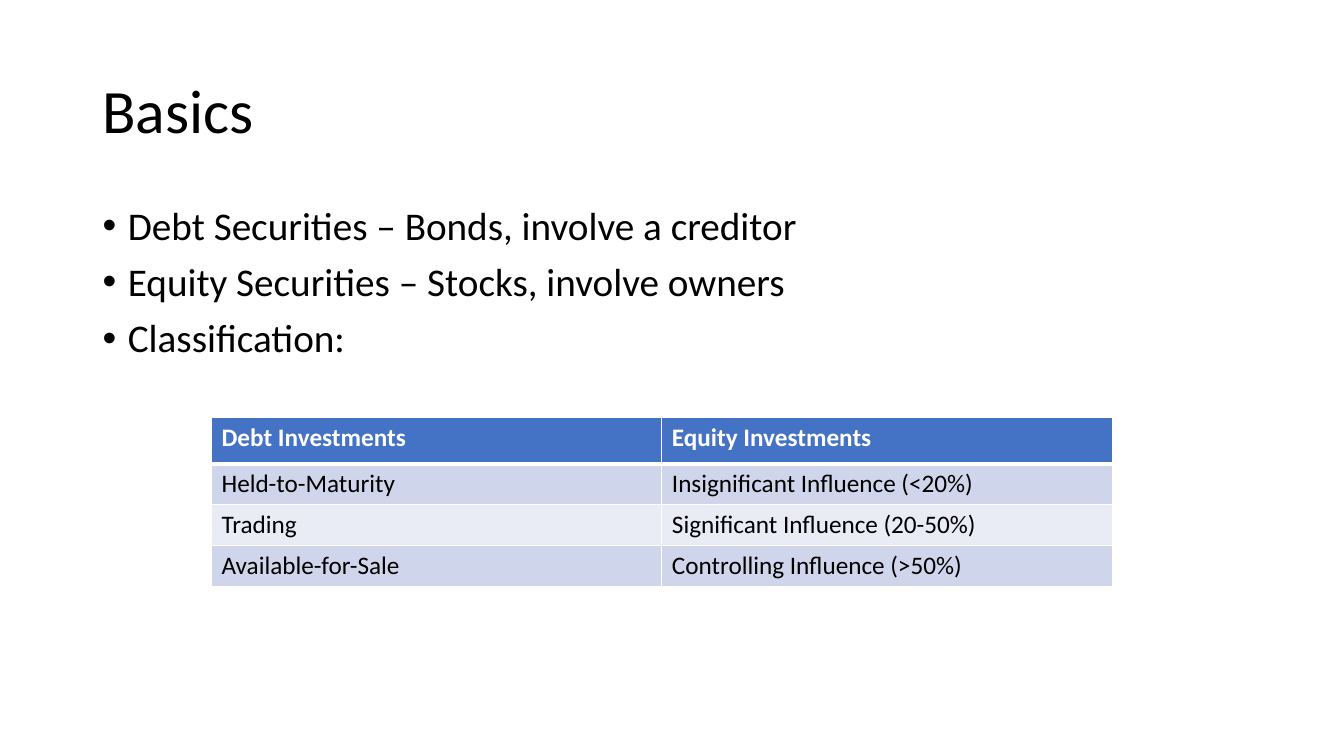
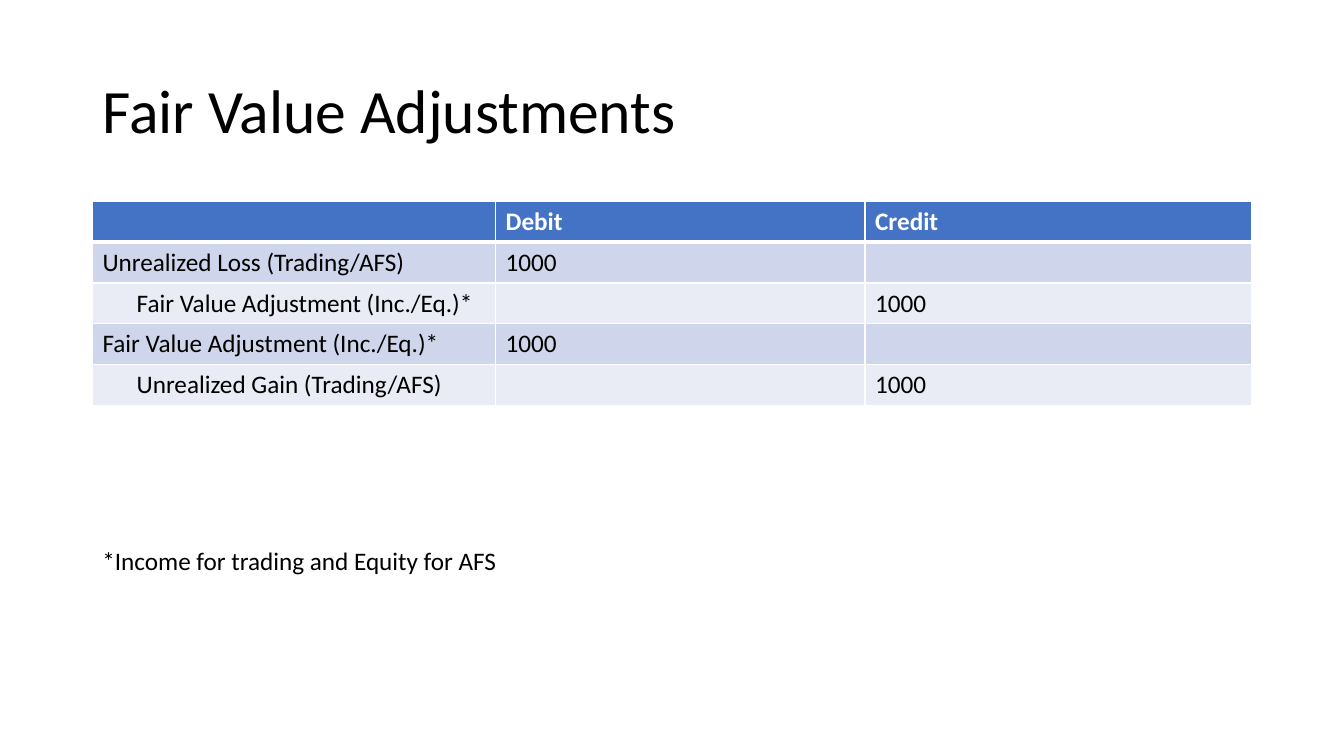
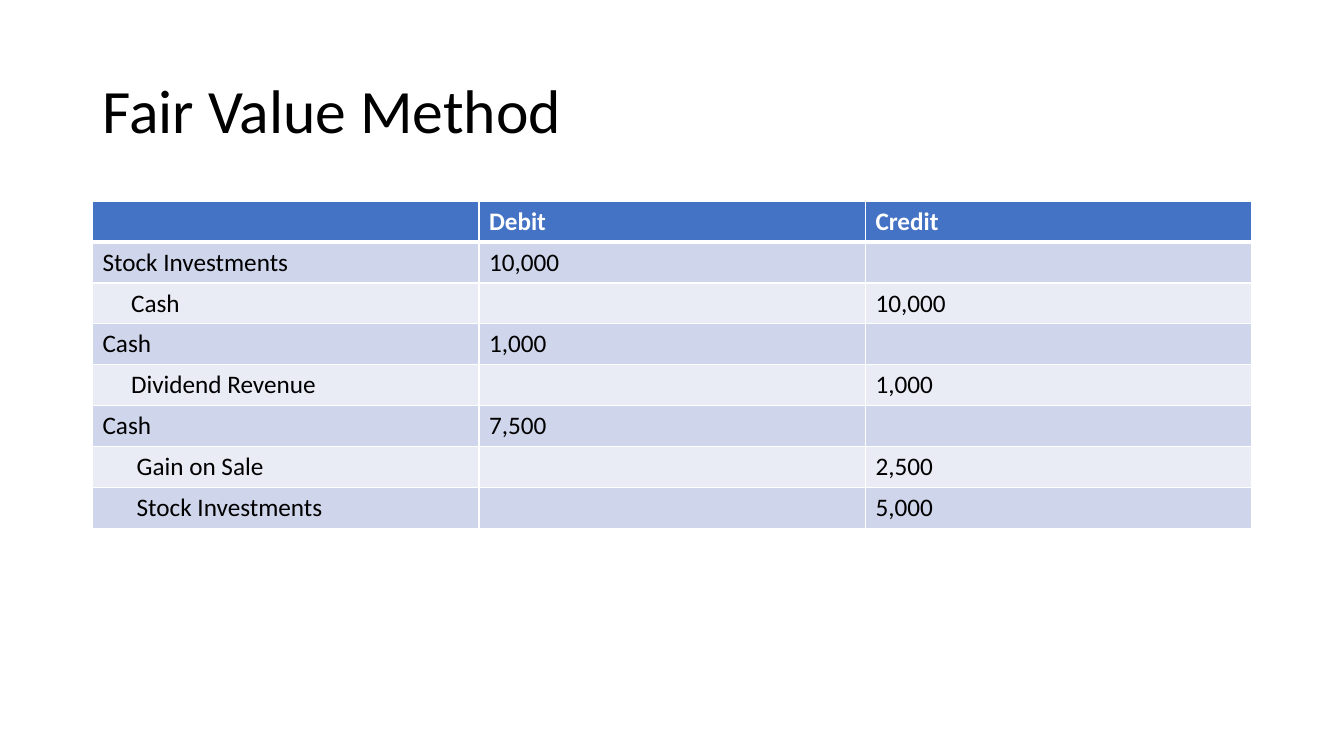
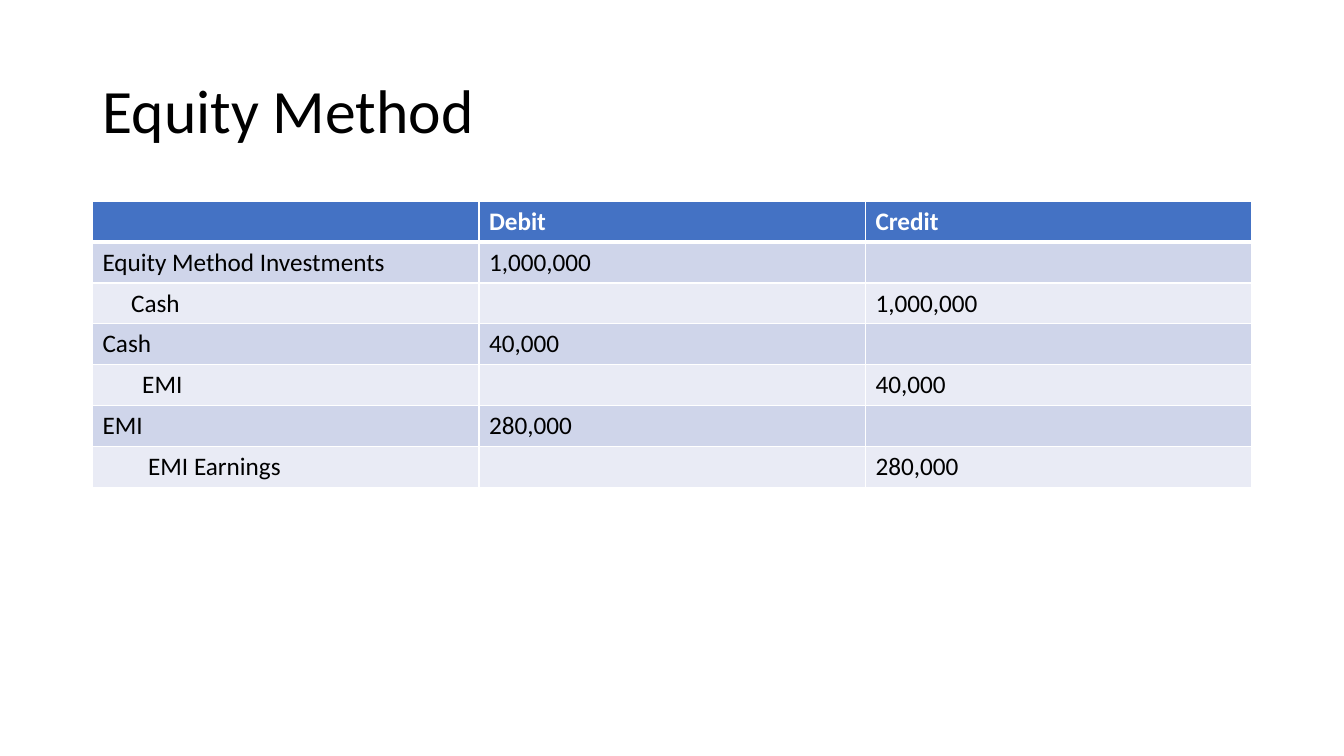
"""Build four slides on debt and equity investments."""
from dataclasses import dataclass

from lxml.etree import SubElement as Sub
from pptx import Presentation
from pptx.dml.color import RGBColor as Rgb
from pptx.enum.text import MSO_ANCHOR as Anchor, MSO_AUTO_SIZE as Fit, PP_ALIGN as Align
from pptx.oxml.ns import qn
from pptx.util import Cm, Pt


@dataclass(frozen=True)
class Theme:
    """Hold the colours, font and type sizes."""
    font: str = "Calibri"
    ink: str = "000000"
    white: str = "FFFFFF"
    head: str = "4472C4"
    bands: tuple[str, str] = ("CFD5EA", "E9EBF5")
    title: int = 44
    body: int = 28
    small: int = 18
    thin: int = 1
    thick: int = 3


@dataclass(frozen=True)
class Box:
    """Hold a place and size in centimetres."""
    left: float
    top: float
    width: float
    height: float


@dataclass(frozen=True)
class Row:
    """Hold the cells of a table row and the indent of the first."""
    cells: tuple[str, ...]
    indent: float = 0


@dataclass(frozen=True)
class Grid:
    """Hold a table with its place and column widths."""
    rows: tuple[Row, ...]
    cols: tuple[float, ...] = (9.74, 9.74, 9.74)
    left: float = 2.33
    top: float = 5.07
    head: float = 1.03


@dataclass(frozen=True)
class Page:
    """Hold what one slide shows."""
    title: str
    grid: Grid
    points: tuple[str, ...] = ()
    note: str = ""


THEME = Theme()
TITLE = Box(2.33, 1.01, 29.21, 3.68)
BODY = Box(2.33, 5.07, 29.21, 12.09)
NOTE = Box(2.33, 13.61, 22.71, 1.8)
LINE = 1.03
HANG = 0.64
LEDGER = Row(("", "Debit", "Credit"))

PAGES = (
    Page(
        "Basics",
        Grid(
            (
                Row(("Debt Investments", "Equity Investments")),
                Row(("Held-to-Maturity", "Insignificant Influence (<20%)")),
                Row(("Trading", "Significant Influence (20-50%)")),
                Row(("Available-for-Sale", "Controlling Influence (>50%)")),
            ),
            cols=(11.35, 11.35), left=5.33, top=10.52, head=1.17,
        ),
        points=(
            "Debt Securities – Bonds, involve a creditor",
            "Equity Securities – Stocks, involve owners",
            "Classification:",
        ),
    ),
    Page(
        "Fair Value Adjustments",
        Grid(
            (
                LEDGER,
                Row(("Unrealized Loss (Trading/AFS)", "1000", "")),
                Row(("Fair Value Adjustment (Inc./Eq.)*", "", "1000"), 0.86),
                Row(("Fair Value Adjustment (Inc./Eq.)*", "1000", "")),
                Row(("Unrealized Gain (Trading/AFS)", "", "1000"), 0.86),
            ),
            cols=(10.16, 9.31, 9.74),
        ),
        note="*Income for trading and Equity for AFS",
    ),
    Page(
        "Fair Value Method",
        Grid((
            LEDGER,
            Row(("Stock Investments", "10,000", "")),
            Row(("Cash", "", "10,000"), 0.72),
            Row(("Cash", "1,000", "")),
            Row(("Dividend Revenue", "", "1,000"), 0.72),
            Row(("Cash", "7,500", "")),
            Row(("Gain on Sale", "", "2,500"), 0.86),
            Row(("Stock Investments", "", "5,000"), 0.86),
        )),
    ),
    Page(
        "Equity Method",
        Grid((
            LEDGER,
            Row(("Equity Method Investments", "1,000,000", "")),
            Row(("Cash", "", "1,000,000"), 0.72),
            Row(("Cash", "40,000", "")),
            Row(("EMI", "", "40,000"), 1.0),
            Row(("EMI", "280,000", "")),
            Row(("EMI Earnings", "", "280,000"), 1.15),
        )),
    ),
)


def style(para, size: int, ink: str = THEME.ink, bold: bool = False) -> None:
    """Set the font and left alignment of a paragraph."""
    para.alignment = Align.LEFT
    font = para.font
    font.name, font.size, font.bold = THEME.font, Pt(size), bold
    font.color.rgb = Rgb.from_string(ink)


def place(shape, box: Box) -> None:
    """Move and size a shape."""
    shape.left, shape.top = Cm(box.left), Cm(box.top)
    shape.width, shape.height = Cm(box.width), Cm(box.height)


def add_title(slide, text: str) -> None:
    """Fill the title placeholder."""
    shape = slide.shapes.title
    place(shape, TITLE)
    frame = shape.text_frame
    frame.text = text
    frame.auto_size = Fit.NONE
    frame.vertical_anchor = Anchor.MIDDLE
    para = frame.paragraphs[0]
    para.line_spacing = 0.9
    style(para, THEME.title)


def add_points(slide, points: tuple[str, ...]) -> None:
    """Fill the body placeholder with a bullet list."""
    shape = slide.placeholders[1]
    place(shape, BODY)
    frame = shape.text_frame
    frame.text = "\n".join(points)
    frame.auto_size = Fit.NONE
    for i, para in enumerate(frame.paragraphs):
        para.line_spacing = 0.9
        para.space_before = Pt(10 if i else 0)
        props = para._p.get_or_add_pPr()
        props.set("marL", str(Cm(HANG)))
        props.set("indent", str(-Cm(HANG)))
        Sub(props, qn("a:buFont"), typeface="Arial")
        Sub(props, qn("a:buChar"), char="•")
        style(para, THEME.body)


def add_note(slide, text: str) -> None:
    """Add a line of small text below the table."""
    shape = slide.shapes.add_textbox(0, 0, 0, 0)
    place(shape, NOTE)
    frame = shape.text_frame
    frame.word_wrap = True
    frame.text = text
    style(frame.paragraphs[0], THEME.small)


def edge(cell, top: int, base: int) -> None:
    """Draw the white borders of a cell."""
    props = cell._tc.get_or_add_tcPr()
    sides = (("L", THEME.thin), ("R", THEME.thin), ("T", top), ("B", base))
    for i, (side, width) in enumerate(sides):
        line = Sub(props, qn(f"a:ln{side}"), w=str(Pt(width)))
        Sub(Sub(line, qn("a:solidFill")), qn("a:srgbClr"), val=THEME.white)
        props.insert(i, line)


def add_grid(slide, grid: Grid) -> None:
    """Draw a table with a header and banded rows."""
    count = len(grid.rows)
    high = grid.head + LINE * (count - 1)
    table = slide.shapes.add_table(
        count, len(grid.cols), Cm(grid.left), Cm(grid.top),
        Cm(sum(grid.cols)), Cm(high),
    ).table
    for col, width in zip(table.columns, grid.cols):
        col.width = Cm(width)
    for r, row in enumerate(grid.rows):
        head = r == 0
        table.rows[r].height = Cm(grid.head if head else LINE)
        fill = THEME.head if head else THEME.bands[(r - 1) % 2]
        for c, text in enumerate(row.cells):
            cell = table.cell(r, c)
            cell.text = text
            cell.fill.solid()
            cell.fill.fore_color.rgb = Rgb.from_string(fill)
            edge(cell, THEME.thick if r == 1 else THEME.thin,
                 THEME.thick if head else THEME.thin)
            para = cell.text_frame.paragraphs[0]
            if row.indent and c == 0:
                para._p.get_or_add_pPr().set("marL", str(Cm(row.indent)))
            style(para, THEME.small, THEME.white if head else THEME.ink, head)


def main() -> None:
    """Build and save the slides."""
    deck = Presentation()
    deck.slide_width, deck.slide_height = Cm(33.87), Cm(19.05)
    for page in PAGES:
        name = "Title and Content" if page.points else "Title Only"
        slide = deck.slides.add_slide(deck.slide_layouts.get_by_name(name))
        add_title(slide, page.title)
        if page.points:
            add_points(slide, page.points)
        add_grid(slide, page.grid)
        if page.note:
            add_note(slide, page.note)
    deck.save("out.pptx")


if __name__ == "__main__":
    main()
